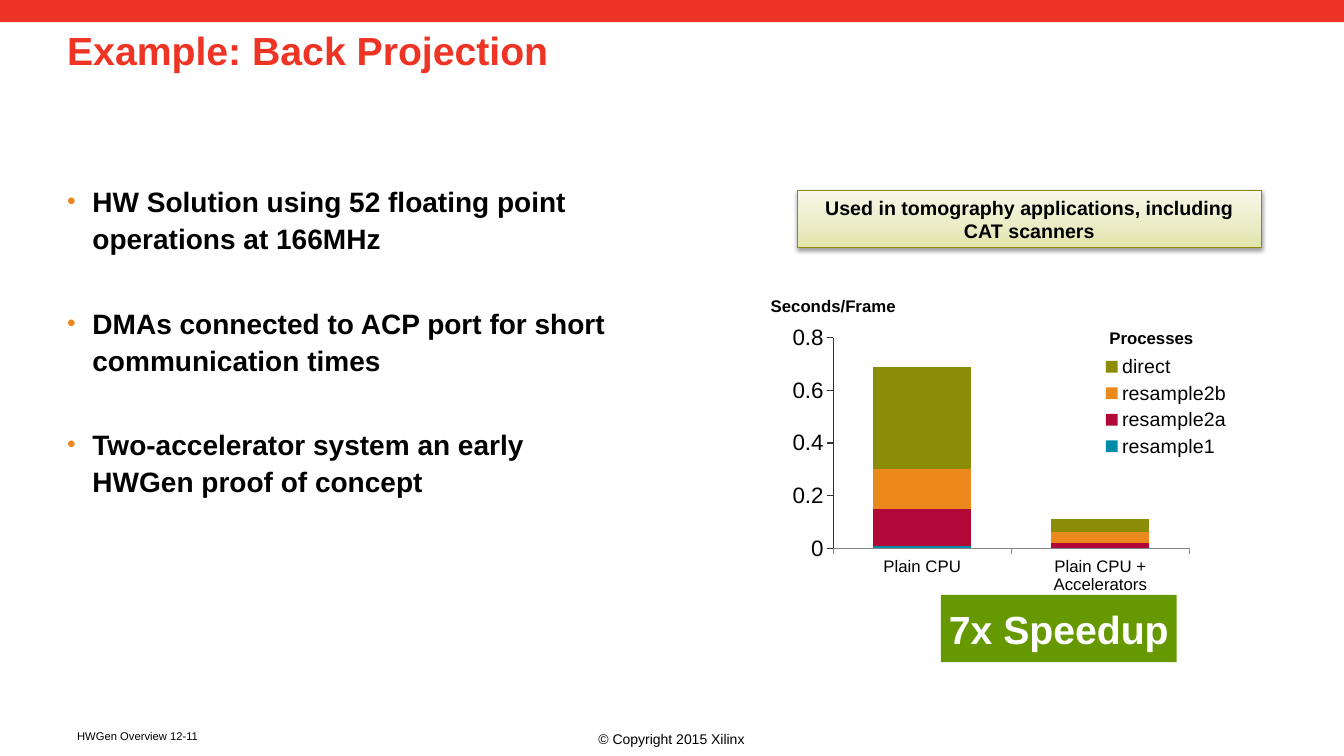
import dataclasses
import pptx
import pptx.chart.data
import pptx.dml.color
import pptx.enum.chart
import pptx.enum.shapes
import pptx.enum.text
import pptx.oxml
import pptx.oxml.ns
import pptx.util
import typing

PT = pptx.util.Pt
ALIGN = pptx.enum.text.PP_ALIGN
ANCHOR = pptx.enum.text.MSO_ANCHOR
CHART = pptx.enum.chart


def tint(code):
    return pptx.dml.color.RGBColor.from_string(code)


def node(tag, inner="", space="a", **attrs):
    names = pptx.oxml.ns.nsdecls(space)
    listed = " ".join(f'{key}="{val}"' for key, val in attrs.items())
    return pptx.oxml.parse_xml(f"<{space}:{tag} {names} {listed}>{inner}</{space}:{tag}>")


def style(font, size, color="000000", bold=False):
    font.name, font.size, font.bold = "Arial", PT(size), bold
    font.color.rgb = tint(color)


def write(frame, *lines, size=12, color="000000", bold=True, align=ALIGN.LEFT,
          anchor=ANCHOR.TOP, wrap=True, left=0.1, pace=None, gap=0, bullet=None):
    frame.word_wrap, frame.vertical_anchor = wrap, anchor
    frame.margin_left = pptx.util.Inches(left)
    for place, line in enumerate(lines):
        para = frame.add_paragraph() if place else frame.paragraphs[0]
        para.alignment = align
        if pace:
            para.line_spacing = pace
        if place:
            para.space_before = PT(gap)
        if bullet:
            props = para._p.get_or_add_pPr()
            props.set("marL", "228600")
            props.set("indent", "-228600")
            props.append(node("buClr", f'<a:srgbClr val="{bullet}"/>'))
            props.append(node("buSzPct", val=88000))
            props.append(node("buFont", typeface="Arial"))
            props.append(node("buChar", char="•"))
        run = para.add_run()
        run.text = line
        style(run.font, size, color, bold)


def layout(parent, after, box, inner=False):
    for old in parent.findall(pptx.oxml.ns.qn("c:layout")):
        parent.remove(old)
    parts = '<c:layoutTarget val="inner"/>' if inner else ""
    parts += '<c:xMode val="edge"/><c:yMode val="edge"/>'
    parts += "".join(f'<c:{key} val="{val}"/>' for key, val in zip("xywh", box))
    fresh = node("layout", f"<c:manualLayout>{parts}</c:manualLayout>", "c")
    if after is None:
        parent.insert(0, fresh)
    else:
        after.addnext(fresh)


@dataclasses.dataclass
class Deck:
    show: typing.Any
    slide: typing.Any

    def area(self, left, top, width, height):
        wide, high = self.show.slide_width, self.show.slide_height
        return [int(share * side / 100) for share, side in
                ((left, wide), (top, high), (width, wide), (height, high))]

    def text(self, box, *lines, **form):
        write(self.slide.shapes.add_textbox(*self.area(*box)).text_frame, *lines, **form)

    def block(self, box, fill, *lines, **form):
        kind = pptx.enum.shapes.MSO_SHAPE.RECTANGLE
        shape = self.slide.shapes.add_shape(kind, *self.area(*box))
        shape.shadow.inherit = False
        shape.fill.solid()
        shape.fill.fore_color.rgb = tint(fill)
        shape.line.fill.background()
        write(shape.text_frame, *lines, **form)
        return shape

    def badge(self, box, stops, edge, *lines, **form):
        shape = self.block(box, stops[0][1], *lines, **form)
        shape.line.color.rgb = tint(edge)
        shape.line.width = PT(0.75)
        props = shape._element.spPr
        marks = "".join(f'<a:gs pos="{spot * 1000}"><a:srgbClr val="{code}"/></a:gs>'
                        for spot, code in stops)
        blend = node("gradFill", f'<a:gsLst>{marks}</a:gsLst><a:lin ang="16200000" scaled="1"/>',
                     rotWithShape=1)
        props.replace(props.find(pptx.oxml.ns.qn("a:solidFill")), blend)
        shade = node("outerShdw", '<a:srgbClr val="000000"><a:alpha val="38000"/></a:srgbClr>',
                     blurRad=PT(3.1), dist=PT(1.6), dir=5400000, rotWithShape=0)
        props.find(pptx.oxml.ns.qn("a:effectLst")).append(shade)

    def stack(self, box, names, series, plot_box, key_box):
        data = pptx.chart.data.CategoryChartData()
        data.categories = names
        for name, _, vals in series:
            data.add_series(name, vals)
        kind = CHART.XL_CHART_TYPE.COLUMN_STACKED
        chart = self.slide.shapes.add_chart(kind, *self.area(*box), data).chart
        style(chart.font, 18)
        chart.has_title = False
        plot = chart.plots[0]
        plot.gap_width, plot.overlap, plot.vary_by_categories = 82, 100, False
        for item, (_, code, _) in zip(plot.series, series):
            item.format.fill.solid()
            item.format.fill.fore_color.rgb = tint(code)
        base, scale = chart.category_axis, chart.value_axis
        for axis, size, code, width in ((base, 12, "868686", 0.75), (scale, 16, "333333", 1)):
            style(axis.tick_labels.font, size)
            axis.format.line.color.rgb = tint(code)
            axis.format.line.width = PT(width)
            axis.major_tick_mark = CHART.XL_TICK_MARK.OUTSIDE
            axis.minor_tick_mark = CHART.XL_TICK_MARK.NONE
        base.tick_label_position = CHART.XL_TICK_LABEL_POSITION.LOW
        scale.minimum_scale, scale.maximum_scale, scale.major_unit = 0, 0.8, 0.2
        grid = scale.major_gridlines.format.line
        grid.color.rgb, grid.width = tint("FFFFFF"), PT(0.75)
        chart.has_legend = True
        key = chart.legend
        key.position = CHART.XL_LEGEND_POSITION.RIGHT
        key.include_in_layout = False
        style(key.font, 14)
        layout(key._element, key._element.find(pptx.oxml.ns.qn("c:legendPos")), key_box)
        layout(chart._chartSpace.chart.plotArea, None, plot_box, True)


def main():
    show = pptx.Presentation()
    show.slide_width = pptx.util.Inches(13.33)
    show.slide_height = pptx.util.Inches(7.5)
    deck = Deck(show, show.slides.add_slide(show.slide_layouts[6]))
    mid = ALIGN.CENTER

    deck.block((0, 0, 100, 2.93), "EE3424")
    deck.text((5, 3.07, 90, 16.67), "Example: Back Projection",
              size=28, color="EE3424", left=0, pace=0.98)
    deck.text((5, 23.33, 41.63, 66),
              "HW Solution using 52 floating point operations at 166MHz",
              "DMAs connected to ACP port for short communication times",
              "Two-accelerator system an early HWGen proof of concept",
              size=20, left=0, pace=1.1, gap=34, bullet="EC891D")
    deck.stack((57.39, 42.53, 38.41, 36), ["Plain CPU", "Plain CPU + Accelerators"],
               [("resample1", "008CA8", (0.01, 0)),
                ("resample2a", "B20838", (0.14, 0.02)),
                ("resample2b", "EC891D", (0.15, 0.04)),
                ("direct", "8B8D09", (0.39, 0.05))],
               (0.12, 0.06, 0.69, 0.78), (0.64, 0.11, 0.25, 0.41))
    deck.badge((59.34, 25.2, 34.51, 7.6),
               [(0, "E2E4A9"), (35, "EAEBC4"), (100, "F7F8E8")], "8B8D06",
               "Used in tomography applications, including CAT scanners",
               size=14, align=mid)
    deck.block((70, 78.67, 17.55, 8.93), "669900", "7x Speedup", size=28,
               color="FFFFFF", align=mid, anchor=ANCHOR.MIDDLE, wrap=False)
    deck.text((56.56, 38.53, 10.88, 4), "Seconds/Frame", align=mid, wrap=False)
    deck.text((81.77, 42.67, 7.8, 4), "Processes", align=mid, wrap=False)
    deck.text((34.13, 96, 31.66, 3.6), "© Copyright 2015 Xilinx", size=10,
              bold=False, align=mid, anchor=ANCHOR.MIDDLE)
    deck.text((5, 95.87, 12.38, 4.13), "HWGen Overview 12-11", size=8, bold=False)
    show.save("out.pptx")


if __name__ == "__main__":
    main()
